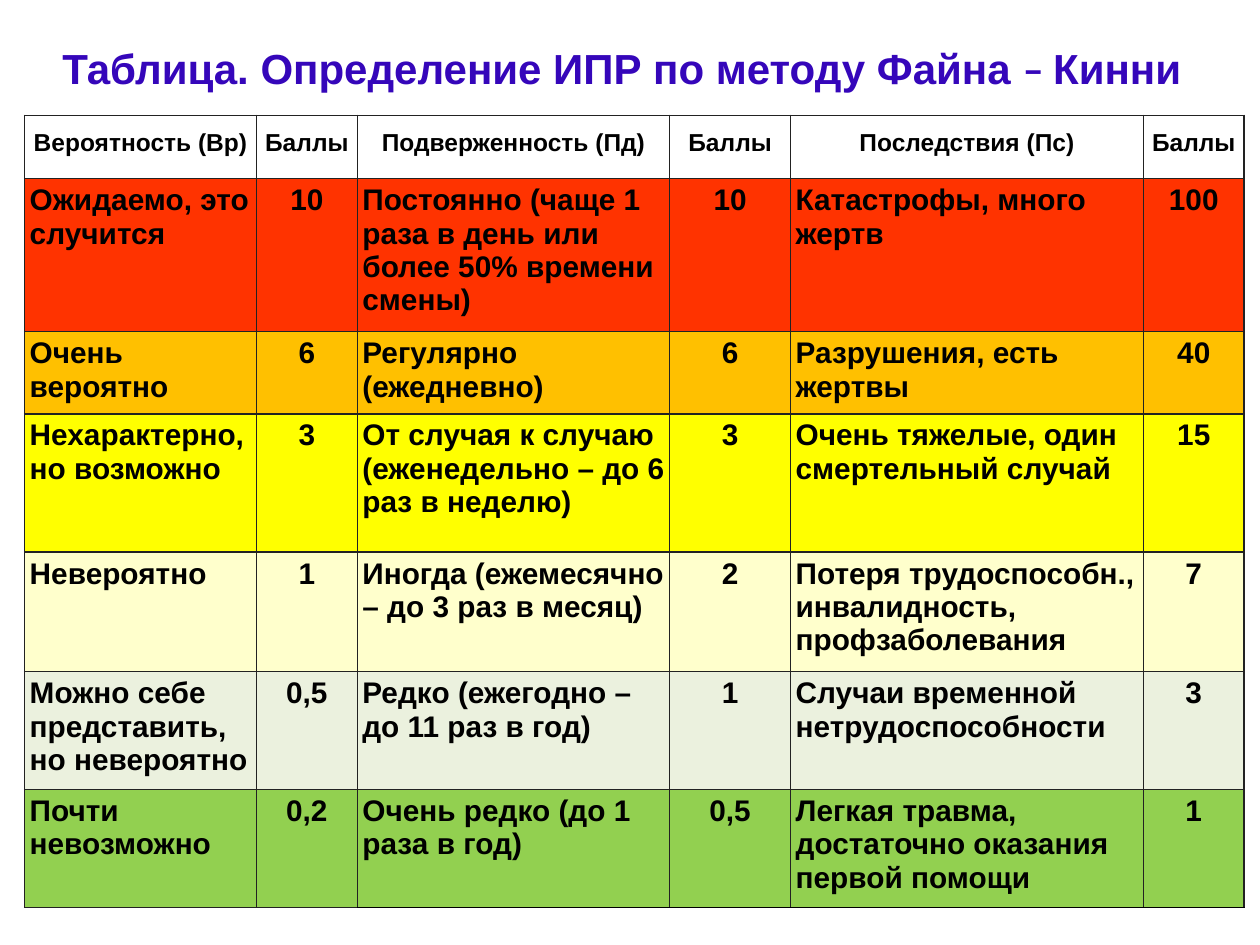
from dataclasses import dataclass

from lxml.etree import SubElement
from pptx import Presentation
from pptx.dml.color import RGBColor as Color
from pptx.enum.text import MSO_ANCHOR as Anchor, MSO_AUTO_SIZE as AutoSize, PP_ALIGN as Align
from pptx.oxml.ns import qn
from pptx.util import Pt


@dataclass(frozen=True)
class Theme:
    font: str = "Arial"
    dash_font: str = "Calibri"
    title_size: float = 24
    header_size: float = 14
    body_size: float = 17
    title_color: str = "3506BA"
    text_color: str = "000000"
    grid_color: str = "222222"
    edge_color: str = "000000"
    grid_width: float = 1
    cell_margin: float = 2.9
    space_after: float = 6.8
    header_leading: float = 11.6


@dataclass(frozen=True)
class Level:
    fill: str
    height: float
    texts: tuple[str, ...]


THEME = Theme()
TITLE = (
    ("Таблица. Определение ИПР по методу Файна ", THEME.font),
    ("– ", THEME.dash_font),
    ("Кинни", THEME.font),
)
COLUMN_WIDTHS = (132.5, 57.6, 178.5, 69.1, 201.6, 57.6)
HEADER_HEIGHT = 36
HEADERS = ("Вероятность (Вр)", "Баллы", "Подверженность (Пд)", "Баллы",
           "Последствия (Пс)", "Баллы")
LEVELS = (
    Level("FF3300", 87.5, (
        "Ожидаемо, это случится", "10",
        "Постоянно (чаще 1 раза в день или более 50% времени смены)", "10",
        "Катастрофы, много жертв", "100")),
    Level("FFC000", 47, (
        "Очень вероятно", "6", "Регулярно (ежедневно)", "6",
        "Разрушения, есть жертвы", "40")),
    Level("FFFF00", 79, (
        "Нехарактерно, но возможно", "3",
        "От случая к случаю (еженедельно – до 6 раз в неделю)", "3",
        "Очень тяжелые, один смертельный случай", "15")),
    Level("FFFFCC", 68.3, (
        "Невероятно", "1", "Иногда (ежемесячно – до 3 раз в месяц)", "2",
        "Потеря трудоспособн., инвалидность, профзаболевания", "7")),
    Level("EBF1DE", 67.4, (
        "Можно себе представить, но невероятно", "0,5",
        "Редко (ежегодно – до 11 раз в год)", "1",
        "Случаи временной нетрудоспособности", "3")),
    Level("92D050", 67.4, (
        "Почти невозможно", "0,2", "Очень редко (до 1 раза в год)", "0,5",
        "Легкая травма, достаточно оказания первой помощи", "1")),
)


def style_font(font, size: float, color: str) -> None:
    font.size = Pt(size)
    font.bold = True
    font.color.rgb = Color.from_string(color)


def add_borders(cell, bottom_color: str) -> None:
    properties = cell._tc.get_or_add_tcPr()
    for side in ("L", "R", "T", "B"):
        line = SubElement(properties, qn(f"a:ln{side}"), w=str(Pt(THEME.grid_width)))
        color = bottom_color if side == "B" else THEME.grid_color
        SubElement(SubElement(line, qn("a:solidFill")), qn("a:srgbClr"), val=color)


def write_cell(cell, text: str, size: float, centred: bool, bottom_color: str):
    """Fill in one cell and return its paragraph."""
    cell.margin_left = cell.margin_right = Pt(THEME.cell_margin)
    cell.margin_top = cell.margin_bottom = Pt(THEME.cell_margin)
    add_borders(cell, bottom_color)
    para = cell.text_frame.paragraphs[0]
    para.add_run().text = text
    para.alignment = Align.CENTER if centred else Align.LEFT
    para.space_after = Pt(THEME.space_after)
    para.font.name = THEME.font
    style_font(para.font, size, THEME.text_color)
    return para


def add_title(page) -> None:
    box = page.shapes.add_textbox(Pt(25.2), Pt(20.9), Pt(660.2), Pt(36))
    frame = box.text_frame
    frame.word_wrap = False
    frame.auto_size = AutoSize.SHAPE_TO_FIT_TEXT
    frame.vertical_anchor = Anchor.MIDDLE
    para = frame.paragraphs[0]
    para.alignment = Align.CENTER
    style_font(para.font, THEME.title_size, THEME.title_color)
    for text, font_name in TITLE:
        span = para.add_run()
        span.text = text
        span.font.name = font_name


def add_risk_table(page) -> None:
    heights = (HEADER_HEIGHT, *(level.height for level in LEVELS))
    table = page.shapes.add_table(
        len(heights), len(COLUMN_WIDTHS), Pt(14.1), Pt(66),
        Pt(sum(COLUMN_WIDTHS)), Pt(sum(heights))).table
    table.first_row = table.horz_banding = False
    for column, width in zip(table.columns, COLUMN_WIDTHS):
        column.width = Pt(width)
    for row, height in zip(table.rows, heights):
        row.height = Pt(height)

    # Header row
    for index, text in enumerate(HEADERS):
        cell = table.cell(0, index)
        para = write_cell(cell, text, THEME.header_size, True, THEME.grid_color)
        para.line_spacing = Pt(THEME.header_leading)
        cell.vertical_anchor = Anchor.MIDDLE
        cell.fill.background()

    # Risk levels: descriptions alternate with centred scores
    for row_index, level in enumerate(LEVELS, start=1):
        for index, text in enumerate(level.texts):
            cell = table.cell(row_index, index)
            on_edge = level is LEVELS[-1] and index >= 2
            write_cell(cell, text, THEME.body_size, index % 2 == 1,
                       THEME.edge_color if on_edge else THEME.grid_color)
            cell.fill.solid()
            cell.fill.fore_color.rgb = Color.from_string(level.fill)


def main() -> None:
    deck = Presentation()
    deck.slide_width, deck.slide_height = Pt(720), Pt(540)
    page = deck.slides.add_slide(deck.slide_layouts[6])
    add_risk_table(page)
    add_title(page)
    deck.save("out.pptx")


if __name__ == "__main__":
    main()
